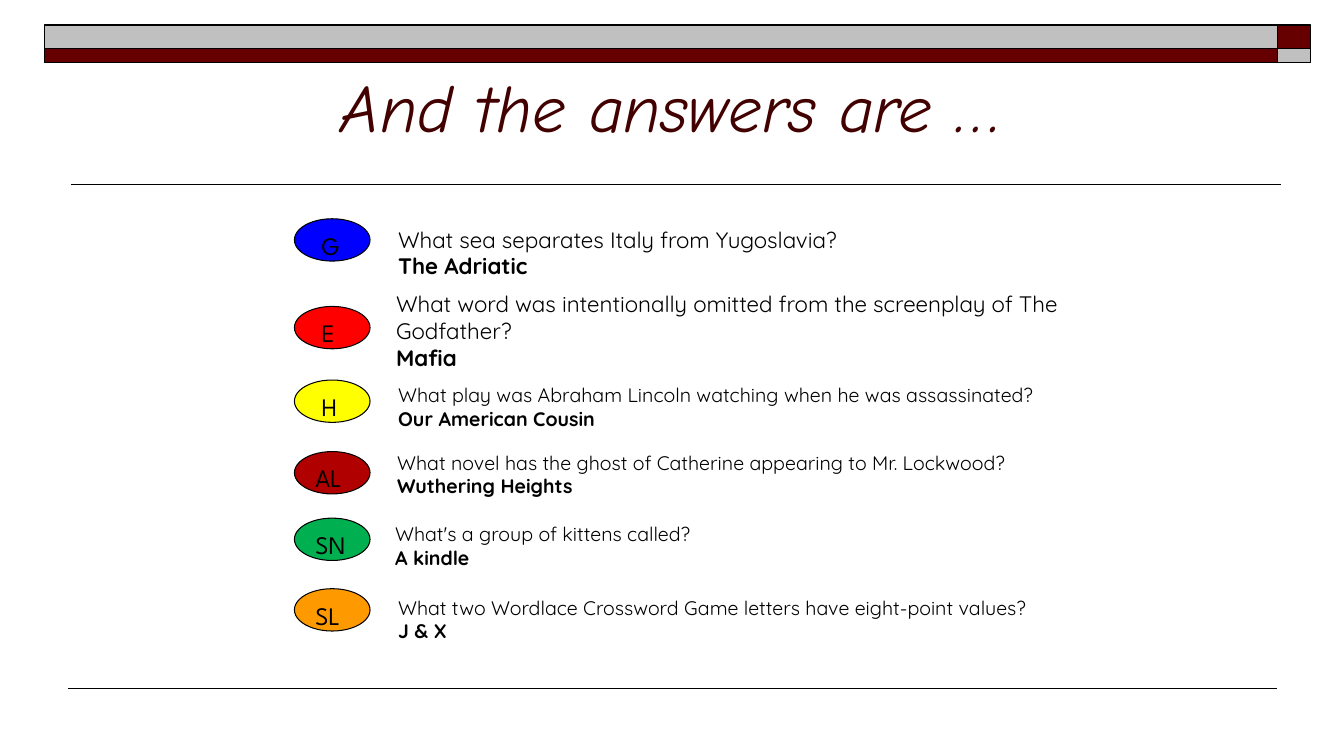
from pptx import Presentation
from pptx import util as u
from pptx.dml.color import RGBColor
from pptx.enum import shapes, text
from pptx.oxml.ns import qn
from lxml import etree

PX = 9144  # 100 px to the inch
BLACK, MAROON, SILVER = "000000", "660000", "C0C0C0"

# badge, colour, badge top, question left, question top, width, height, size, question, answer
ANSWERS = [
    (" G", "0000FF", 217, 385, 219, 617, 64, 16,
     "What sea separates Italy from Yugoslavia?", "The Adriatic"),
    (" E", "FF0000", 304, 383, 283, 683, 91, 16,
     "What word was intentionally omitted from the screenplay of The Godfather?", "Mafia"),
    (" H", "FFFF00", 377, 385, 375, 741, 57, 14,
     "What play was Abraham Lincoln watching when he was assassinated?", "Our American Cousin"),
    ("AL", "B10000", 448, 384, 442, 708, 57, 14,
     "What novel has the ghost of Catherine appearing to Mr. Lockwood?", "Wuthering Heights"),
    ("SN", "00B050", 514, 382, 513, 675, 57, 14,
     "What's a group of kittens called?", "A kindle"),
    ("SL", "FF9900", 584, 385, 586, 717, 57, 14,
     "What two Wordlace Crossword Game letters have eight-point values?", "J & X"),
]


def px(*lengths):
    return [u.Emu(length * PX) for length in lengths]


def colour(value):
    return RGBColor.from_string(value)


def set_font(paragraph, name, size, value, bold=False, italic=False):
    for run in paragraph.runs:
        font = run.font
        font.name, font.size = name, u.Pt(size)
        font.bold, font.italic = bold, italic
        font.color.rgb = colour(value)


def add_filled(slide, kind, box, fill, line_width):
    shape = slide.shapes.add_shape(kind, *px(*box))
    shape.shadow.inherit = False
    shape.fill.solid()
    shape.fill.fore_color.rgb = colour(fill)
    shape.line.color.rgb = colour(BLACK)
    shape.line.width = u.Pt(line_width)
    return shape


def add_rule(slide, left, right, top, width):
    line = slide.shapes.add_connector(
        shapes.MSO_CONNECTOR.STRAIGHT, *px(left, top, right, top))
    line.line.color.rgb = colour(BLACK)
    line.line.width = u.Pt(width)
    etree.SubElement(line._element.spPr, qn("a:effectLst"))


def add_header_bars(slide, left, top, width, height):
    """Two stacked bars, with the colours swapped in the end blocks."""
    end, upper = 33, 23
    long = width - end
    for y, bar_height, main, accent in [
            (top, upper, SILVER, MAROON),
            (top + upper, height - upper, MAROON, SILVER)]:
        for x, bar_width, fill in [(left, long, main), (left + long, end, accent)]:
            add_filled(slide, shapes.MSO_SHAPE.RECTANGLE,
                       (x, y, bar_width, bar_height), fill, 1)


def set_title(slide, box, wording):
    title = slide.shapes.title
    title.left, title.top, title.width, title.height = px(*box)
    frame = title.text_frame
    frame.text = wording
    frame.auto_size = text.MSO_AUTO_SIZE.NONE
    frame.vertical_anchor = text.MSO_ANCHOR.BOTTOM
    frame.paragraphs[0].alignment = text.PP_ALIGN.CENTER
    set_font(frame.paragraphs[0], "Comic Neue", 48, "420000", italic=True)


def add_badge(slide, box, label, fill):
    badge = add_filled(slide, shapes.MSO_SHAPE.OVAL, box, fill, 0.75)
    frame = badge.text_frame
    frame.text = label
    frame.vertical_anchor = text.MSO_ANCHOR.TOP
    frame.paragraphs[0].alignment = text.PP_ALIGN.LEFT
    set_font(frame.paragraphs[0], "League Spartan", 18, BLACK)


def add_answer(slide, box, size, question, answer):
    frame = slide.shapes.add_textbox(*px(*box)).text_frame
    frame.word_wrap = True
    frame.text = question
    frame.add_paragraph().text = answer
    for paragraph, bold in zip(frame.paragraphs, (False, True)):
        set_font(paragraph, "Quicksand", size, BLACK, bold=bold)


def build_answers_slide(presentation):
    slide = presentation.slides.add_slide(presentation.slide_layouts[5])
    add_rule(slide, 70, 1271, 183, 1)
    add_header_bars(slide, 44, 25, 1256, 37)
    add_rule(slide, 67, 1267, 683, 0.75)
    set_title(slide, (217, 25, 900, 125), "And the answers are …")
    for label, fill, badge_top, left, top, width, height, size, question, answer in ANSWERS:
        add_badge(slide, (292, badge_top, 75, 42), label, fill)
        add_answer(slide, (left, top, width, height), size, question, answer)


def main():
    presentation = Presentation()
    presentation.slide_width, presentation.slide_height = px(1333, 750)
    build_answers_slide(presentation)
    presentation.save("out.pptx")


if __name__ == "__main__":
    main()
